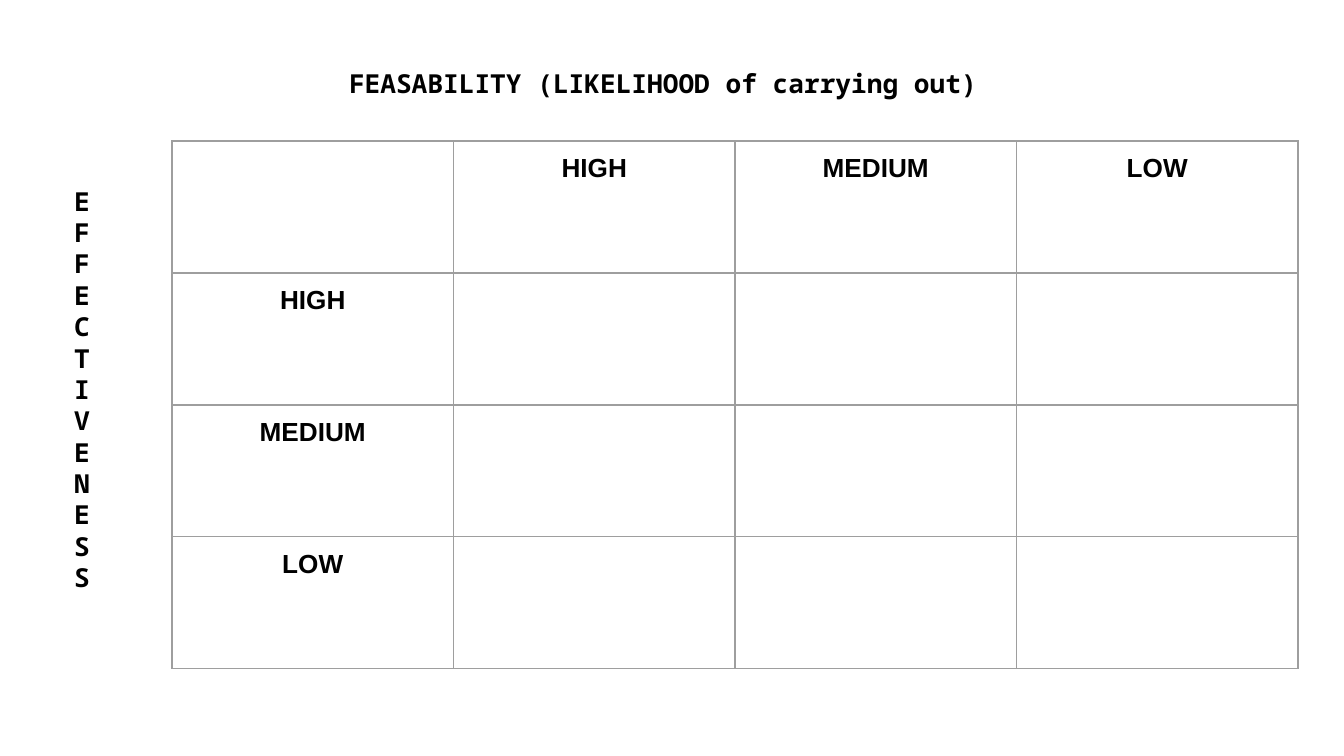
from lxml import etree
from pptx import Presentation, util as u
from pptx.dml.color import RGBColor
from pptx.enum import text as t
from pptx.oxml.ns import qn

PAD = 13
MONO = "Noto Sans Mono"
LEVELS = ["HIGH", "MEDIUM", "LOW"]


def px(n):
    """Turn pixels at 134.4 to the inch into EMU."""
    return u.Emu(round(n * 914400 / 134.4))


def color(code):
    """Turn a hex string into a colour."""
    return RGBColor.from_string(code)


def write(frame, words, font="Arial", size=14, ink="000000", bold=True, align=t.PP_ALIGN.LEFT):
    """Put one formatted line of text into a frame."""
    para = frame.paragraphs[0]
    para.alignment = align
    run = para.add_run()
    run.text = words
    run.font.name = font
    run.font.size = u.Pt(size)
    run.font.bold = bold
    run.font.color.rgb = color(ink)


def label(shape, box, words):
    """Place a shape and give it an axis label."""
    shape.left, shape.top, shape.width, shape.height = map(px, box)
    frame = shape.text_frame
    frame.word_wrap = True
    frame.auto_size = t.MSO_AUTO_SIZE.NONE
    frame.vertical_anchor = t.MSO_ANCHOR.TOP
    frame.margin_left = frame.margin_right = px(PAD)
    frame.margin_top = frame.margin_bottom = px(PAD)
    write(frame, words, font=MONO)


def border(cell, ink="9E9E9E", width=0.75):
    """Draw a thin line on all four sides of a cell."""
    props = cell._tc.get_or_add_tcPr()
    for spot, side in enumerate(["a:lnL", "a:lnR", "a:lnT", "a:lnB"]):
        line = etree.Element(qn(side), w=str(u.Pt(width)))
        fill = etree.SubElement(line, qn("a:solidFill"))
        etree.SubElement(fill, qn("a:srgbClr"), val=ink)
        props.insert(spot, line)


def matrix(slide, box, heads):
    """Add a square grid with the same heads across and down."""
    count = len(heads) + 1
    table = slide.shapes.add_table(count, count, *map(px, box)).table
    table.first_row = table.horz_banding = False
    for cell in table.iter_cells():
        cell.fill.background()
        cell.margin_left = cell.margin_right = px(PAD)
        cell.margin_top = cell.margin_bottom = px(PAD)
        border(cell)
    for i, head in enumerate(heads, 1):
        for cell in (table.cell(0, i), table.cell(i, 0)):
            write(cell.text_frame, head, align=t.PP_ALIGN.CENTER)


def main():
    """Build the slide and save it."""
    deck = Presentation()
    deck.slide_width, deck.slide_height = px(1344), px(756)
    slide = deck.slides.add_slide(deck.slide_layouts[5])
    matrix(slide, (172, 141, 1126, 528), LEVELS)
    label(slide.shapes.title, (336, 54, 690, 56), "FEASABILITY (LIKELIHOOD of carrying out)")
    side = (61, 172, 41, 468)
    label(slide.shapes.add_textbox(*map(px, side)), side, "EFFECTIVENESS")
    deck.save("out.pptx")


if __name__ == "__main__":
    main()
